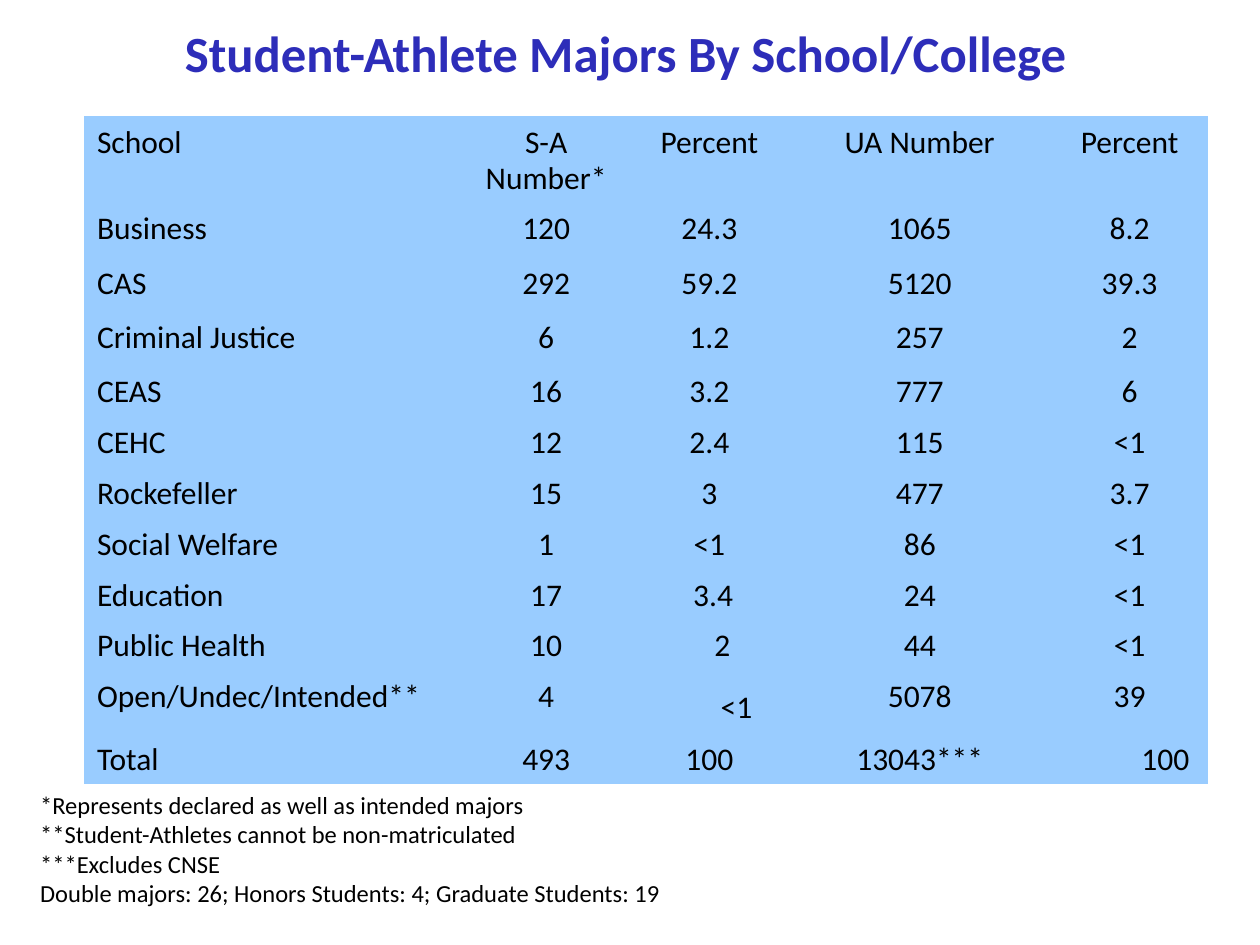
"""Build the slide of student-athlete majors by school or college."""
import pptx
import pptx.dml.color
import pptx.enum.text
import pptx.util

Inches = pptx.util.Inches
ALIGN = pptx.enum.text.PP_ALIGN
ANCHOR = pptx.enum.text.MSO_ANCHOR
COLORS = {"title": "2D2DB9", "text": "000000", "cell": "99CCFF"}
NO_GRID_STYLE = "{2D5ABB26-0587-4C30-8999-92F81FD0307C}"
COLUMN_WIDTHS = [3, 1.33, 1.26, 2.08, 1.25]
ROW_HEIGHTS = [0.4] + [0.43] * 3 + [0.4] * 6 + [0.5, 0.4]
MAJORS = [
    ["School", "S-A Number*", "Percent", "UA Number", "Percent"],
    ["Business", "120", "24.3", "1065", "8.2"],
    ["CAS", "292", "59.2", "5120", "39.3"],
    ["Criminal Justice", "6", "1.2", "257", "2"],
    ["CEAS", "16", "3.2", "777", "6"],
    ["CEHC", "12", "2.4", "115", "<1"],
    ["Rockefeller", "15", "3", "477", "3.7"],
    ["Social Welfare", "1", "<1", "86", "<1"],
    ["Education", "17", "3.4", "24", "<1"],
    ["Public Health", "10", "2", "44", "<1"],
    ["Open/Undec/Intended**", "4", "<1", "5078", "39"],
    ["Total", "493", "100", "13043***", "100"],
]
LEFT_INSETS = {(8, 2): 0.16, (9, 2): 0.67, (10, 2): 0.72, (11, 4): 0.72}
LEFT_ALIGNED = {(9, 2), (10, 2), (11, 4)}
TOP_INSETS = {(10, 2): 0.15}
NOTES = [
    "*Represents declared as well as intended majors",
    "**Student-Athletes cannot be non-matriculated",
    "***Excludes CNSE",
    "Double majors: 26; Honors Students: 4; Graduate Students: 19",
]


def format_runs(text_frame, size, color, bold=False):
    for paragraph in text_frame.paragraphs:
        for run in paragraph.runs:
            run.font.name = "Calibri"
            run.font.size = pptx.util.Pt(size)
            run.font.bold = bold
            run.font.color.rgb = pptx.dml.color.RGBColor.from_string(COLORS[color])


deck = pptx.Presentation()
deck.slide_width, deck.slide_height = Inches(10), Inches(7.5)
slide = deck.slides.add_slide(deck.slide_layouts[5])

heading = slide.shapes.title
heading.left, heading.top = Inches(0.47), 0
heading.width, heading.height = int(deck.slide_width * 0.9), int(deck.slide_height * 0.11)
heading_text = heading.text_frame
heading_text.text = "Student-Athlete Majors By School/College"
heading_text.auto_size = pptx.enum.text.MSO_AUTO_SIZE.NONE
heading_text.vertical_anchor = ANCHOR.MIDDLE
heading_text.margin_left = heading_text.margin_right = 0
heading_text.margin_top = heading_text.margin_bottom = 0
heading_text.paragraphs[0].alignment = ALIGN.CENTER
format_runs(heading_text, 29, "title", bold=True)

majors_frame = slide.shapes.add_table(
    len(MAJORS), len(COLUMN_WIDTHS),
    Inches(0.67), Inches(0.92), Inches(sum(COLUMN_WIDTHS)), Inches(5.24))
majors_table = majors_frame.table
majors_table.first_row = majors_table.horz_banding = False
majors_table._tbl.tblPr.find(pptx.oxml.ns.qn("a:tableStyleId")).text = NO_GRID_STYLE
for column, width in zip(majors_table.columns, COLUMN_WIDTHS):
    column.width = Inches(width)
for row, height in zip(majors_table.rows, ROW_HEIGHTS):
    row.height = Inches(height)

for r, school in enumerate(MAJORS):
    for c, entry in enumerate(school):
        cell = majors_table.cell(r, c)
        cell.fill.solid()
        cell.fill.fore_color.rgb = pptx.dml.color.RGBColor.from_string(COLORS["cell"])
        cell.margin_left = Inches(LEFT_INSETS.get((r, c), 0.1))
        cell.margin_top = Inches(TOP_INSETS.get((r, c), 0.07))
        cell.margin_right, cell.margin_bottom = Inches(0.1), Inches(0.05)
        cell.text_frame.text = entry
        paragraph = cell.text_frame.paragraphs[0]
        paragraph.line_spacing = 0.93
        at_left = c == 0 or (r, c) in LEFT_ALIGNED
        paragraph.alignment = ALIGN.LEFT if at_left else ALIGN.CENTER
        format_runs(cell.text_frame, 18, "text")

footnotes = slide.shapes.add_textbox(
    Inches(0.22), Inches(6.22), Inches(9.25), Inches(1.04)).text_frame
footnotes.word_wrap = True
footnotes.text = "\n".join(NOTES)
format_runs(footnotes, 14, "text")

deck.save("out.pptx")
